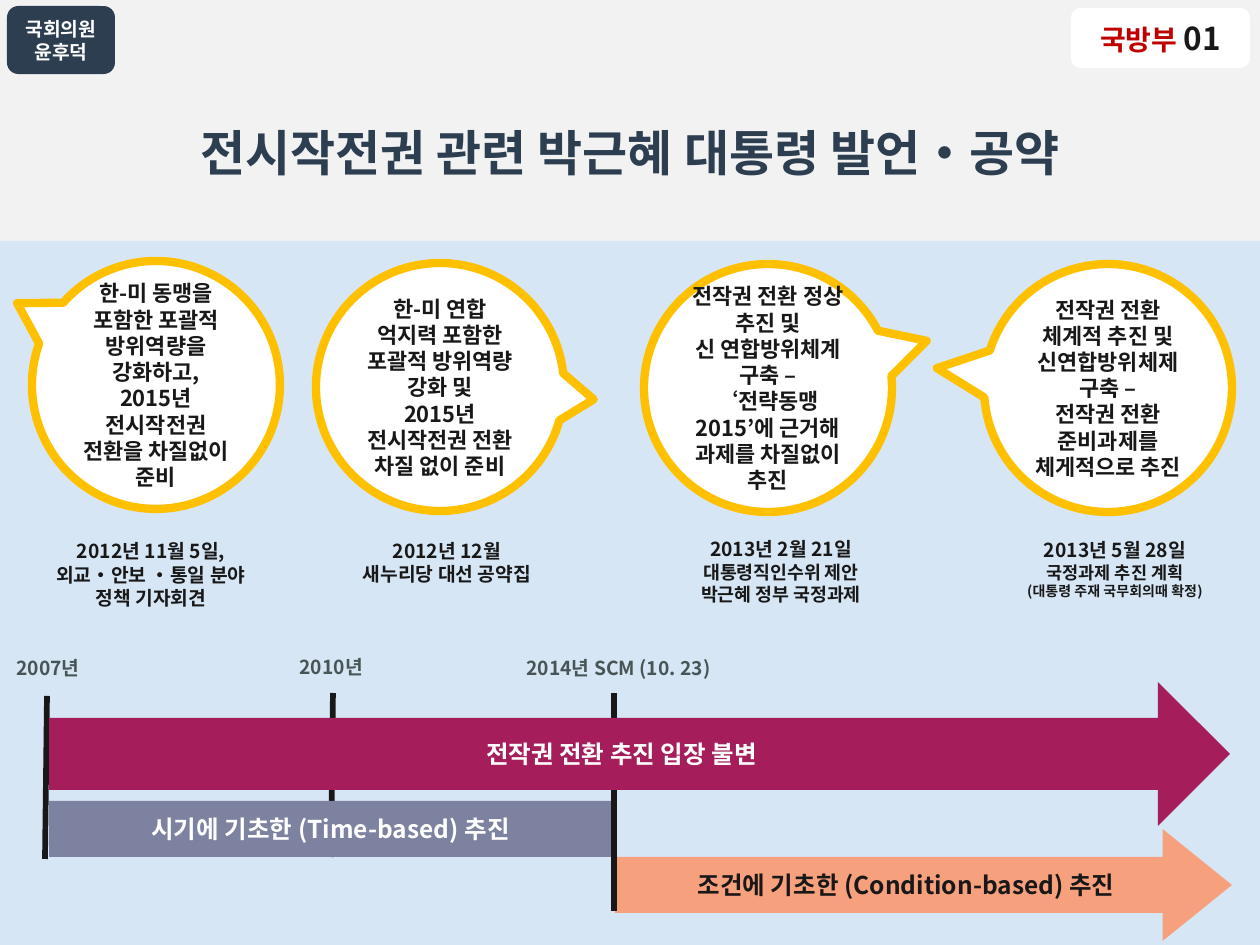
from lxml import etree
from pptx import Presentation
from pptx.dml.color import RGBColor
from pptx.enum.shapes import MSO_CONNECTOR, MSO_SHAPE
from pptx.enum.text import MSO_ANCHOR, PP_ALIGN
from pptx.oxml.ns import qn
from pptx.util import Pt

PX = 914400 / 126
FONT = "Noto Sans CJK KR"
RECTANGLE = MSO_SHAPE.RECTANGLE
ROUNDED = MSO_SHAPE.ROUNDED_RECTANGLE
ARROW = MSO_SHAPE.RIGHT_ARROW
CALLOUT = MSO_SHAPE.OVAL_CALLOUT
STRAIGHT = MSO_CONNECTOR.STRAIGHT
TOP, MIDDLE = MSO_ANCHOR.TOP, MSO_ANCHOR.MIDDLE
LEFT, CENTER = PP_ALIGN.LEFT, PP_ALIGN.CENTER

COLORS = {
    "background": "F9F9F9", "header": "F2F2F2", "body": "D7E6F5",
    "navy": "2C3E50", "white": "FFFFFF", "ink": "181818", "red": "C00000",
    "gold": "FFC000", "slate": "485556", "orange": "F6A07E",
    "lavender": "7D82A0", "crimson": "A51E5B",
}
COLORS = {name: RGBColor.from_string(value) for name, value in COLORS.items()}

presentation = Presentation()
presentation.slide_width = round(1260 * PX)
presentation.slide_height = round(945 * PX)
slide = presentation.slides.add_slide(presentation.slide_layouts[6])
slide.background.fill.solid()
slide.background.fill.fore_color.rgb = COLORS["background"]


def write(shape, paragraphs, color, anchor=MIDDLE, align=CENTER):
    """Each paragraph is a list of (text, size) or (text, size, color) runs."""
    frame = shape.text_frame
    frame.word_wrap = True
    frame.vertical_anchor = anchor
    for index, runs in enumerate(paragraphs):
        paragraph = frame.paragraphs[0] if index == 0 else frame.add_paragraph()
        paragraph.alignment = align
        fonts = [paragraph.font] if len(runs) == 1 else []
        for text, *style in runs:
            run = paragraph.add_run()
            run.text = text
            if len(runs) > 1:
                fonts.append(run.font)
        for font, (text, size, *own_color) in zip(fonts, runs):
            font.size = Pt(size)
            font.bold = True
            font.color.rgb = COLORS[own_color[0] if own_color else color]
            font.name = FONT
            etree.SubElement(font._element, qn("a:ea"), typeface=FONT)


def add_box(kind, box, fill=None, line=None, adjustments=()):
    shape = slide.shapes.add_shape(kind, *(round(value * PX) for value in box))
    shape.shadow.inherit = False
    if fill:
        shape.fill.solid()
        shape.fill.fore_color.rgb = COLORS[fill]
    else:
        shape.fill.background()
    if line:
        shape.line.color.rgb = COLORS[line]
        shape.line.width = Pt(4.75)
    else:
        shape.line.fill.background()
    for index, value in enumerate(adjustments):
        shape.adjustments[index] = value
    return shape


# Header and body bands
add_box(RECTANGLE, (0, 0, 1260, 252), "header")
add_box(RECTANGLE, (0, 241, 1260, 704), "body")

# Name badge and ministry badge
badge = add_box(ROUNDED, (7, 6, 108, 68), "navy")
write(badge, [[("국회의원", 11)], [("윤후덕", 11)]], "white")
badge = add_box(ROUNDED, (1071, 8, 179, 60), "white")
write(badge, [[("국방부 ", 16, "red"), ("01", 18)]], "ink")

# Timeline: markers lie between the bars
timeline = [
    ("line", (47, 696, 45, 859)),
    ("bar", ARROW, (615, 829, 617, 112), "orange", (0.5, 0.62),
     "조건에 기초한 (Condition-based) 추진", "ink"),
    ("line", (333, 693, 331, 857)),
    ("bar", RECTANGLE, (49, 801, 563, 56), "lavender", (),
     "시기에 기초한 (Time-based) 추진", "white"),
    ("line", (614, 693, 614, 911)),
    ("bar", ARROW, (49, 682, 1181, 144), "crimson", (),
     "전작권 전환 추진 입장 불변", "white"),
]
for part, *details in timeline:
    if part == "line":
        ends = [round(value * PX) for value in details[0]]
        marker = slide.shapes.add_connector(STRAIGHT, *ends)
        marker.line.color.rgb = COLORS["ink"]
        marker.line.width = Pt(3.25)
        etree.SubElement(marker._element.spPr, qn("a:effectLst"))
    else:
        kind, box, fill, adjustments, text, color = details
        bar = add_box(kind, box, fill, adjustments=adjustments)
        write(bar, [[(text, 14)]], color)

# Title and year labels
labels = [
    ((0, 116, 1260, 72), "전시작전권 관련 박근혜 대통령 발언•공약", 28, "navy", MIDDLE, CENTER),
    ((4, 650, 129, 37), "2007년", 11, "slate", TOP, LEFT),
    ((287, 649, 135, 37), "2010년", 11, "slate", TOP, LEFT),
    ((514, 650, 266, 37), "2014년 SCM (10. 23)", 11, "slate", TOP, LEFT),
]
for box, text, size, color, anchor, align in labels:
    label = slide.shapes.add_textbox(*(round(value * PX) for value in box))
    write(label, [[(text, size)]], color, anchor, align)

# Statements: callout position, tail, text; caption box and lines
statements = [
    ((32, 261), (-0.56, -0.33),
     ["한-미 동맹을 포함한 포괄적 방위역량을 강화하고,",
      "2015년 전시작전권 전환을 차질없이 준비"],
     (35, 529, 232, 92),
     [("2012년 11월 5일,", 11), ("외교•안보 •통일 분야", 11), ("정책 기자회견", 11)]),
    ((316, 263), (0.62, 0.05),
     ["한-미 연합 억지력 포함한 포괄적 방위역량 강화 및",
      "2015년 전시작전권 전환 차질 없이 준비"],
     (331, 529, 232, 76),
     [("2012년 12월", 11), ("새누리당 대선 공약집", 11)]),
    ((644, 264), (0.64, -0.19),
     ["전작권 전환 정상 추진 및", "신 연합방위체계 구축 –",
      "‘전략동맹 2015’에 근거해 과제를 차질없이 추진"],
     (665, 527, 232, 92),
     [("2013년 2월 21일", 11), ("대통령직인수위 제안", 10.5), ("박근혜 정부 국정과제", 10.5)]),
    ((984, 264), (-0.69, -0.08),
     ["전작권 전환 체계적 추진 및 신연합방위체제 구축 –",
      "전작권 전환 준비과제를 체게적으로 추진"],
     (1003, 528, 224, 91),
     [("2013년 5월 28일", 11), ("국정과제 추진 계획", 10), ("(대통령 주재 국무회의때 확정)", 8)]),
]
for (left, top), tail, texts, caption_box, caption_lines in statements:
    callout = add_box(CALLOUT, (left, top, 248, 248), "white", "gold", tail)
    callout.text_frame.margin_left = callout.text_frame.margin_right = round(11 * PX)
    write(callout, [[(text, 12.5)] for text in texts], "ink")
    caption = add_box(ROUNDED, caption_box)
    write(caption, [[line] for line in caption_lines], "ink", TOP)

presentation.save("out.pptx")
